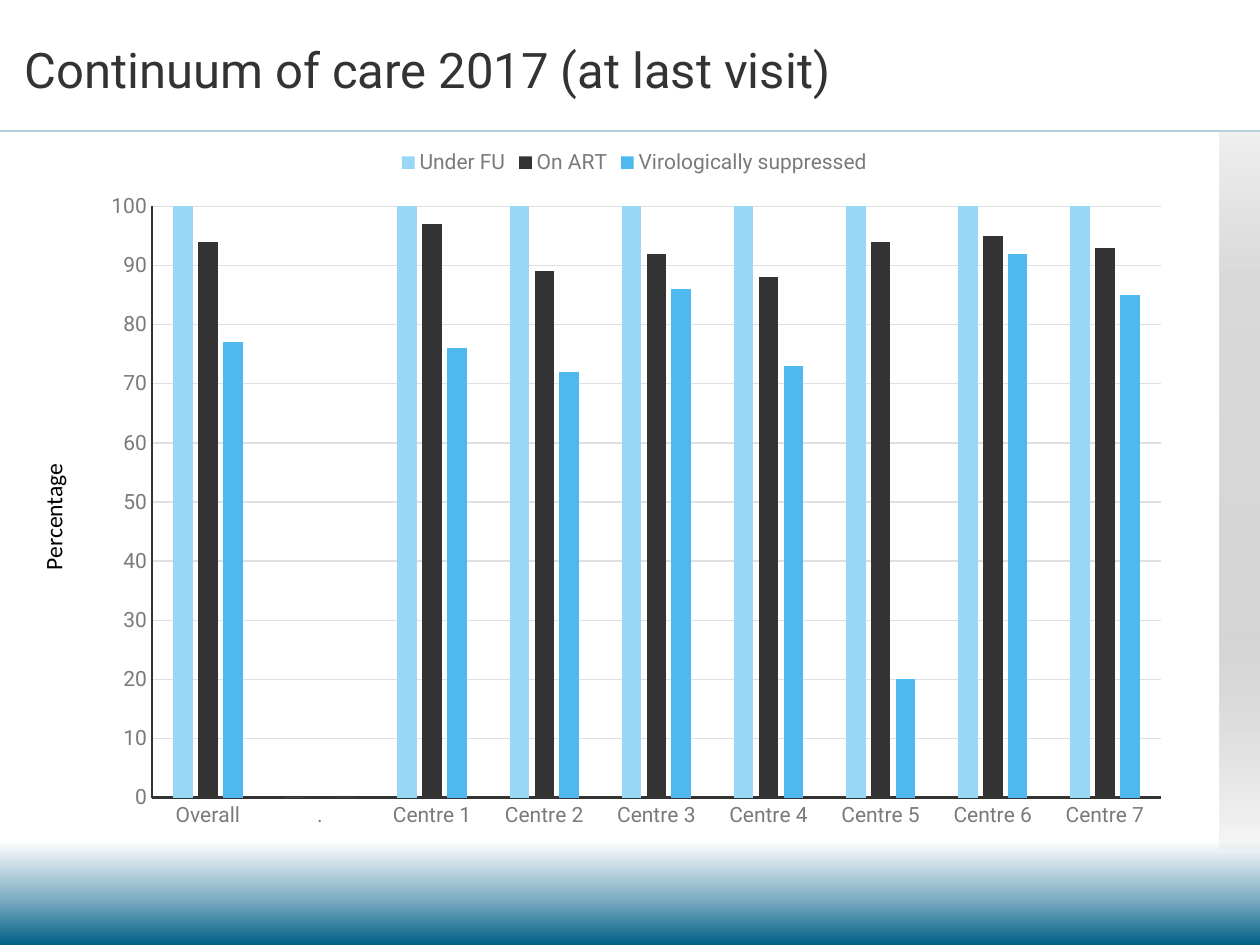
from dataclasses import dataclass

from lxml import etree
from pptx import Presentation
from pptx import util as u
from pptx.chart import data as chart_data
from pptx.dml.color import RGBColor
from pptx.enum import chart as charts, shapes, text
from pptx.oxml import ns

PX = 914400 / 126
SERIES = {
    "Under FU": ("99D7F6", [100, 0, 100, 100, 100, 100, 100, 100, 100]),
    "On ART": ("333333", [94, 0, 97, 89, 92, 88, 94, 95, 93]),
    "Virologically suppressed": ("4DB9EF", [77, 0, 76, 72, 86, 73, 20, 92, 85]),
}
CATEGORIES = ["Overall", "."] + [f"Centre {n}" for n in range(1, 8)]


@dataclass(frozen=True)
class Theme:
    dark: str = "333333"
    grey: str = "7A7A7A"
    grid: str = "E0E0E0"
    black: str = "000000"
    rule: str = "005F86"
    backdrop: tuple = ((89, "FFFFFF", 100), (95, "80AFC3", 100), (100, "005F86", 100))
    band: tuple = ((0, "D9D9D9", 40), (21, "D9D9D9", 100),
                   (70, "D5D5D5", 100), (100, "BFBFBF", 13))
    font: str = "Roboto"
    label_font: str = "Calibri"
    title_size: float = 28
    label_size: float = 13.5
    chart_size: float = 12


def px(*lengths):
    return [u.Emu(round(length * PX)) for length in lengths]


def rgb(value):
    return RGBColor.from_string(value)


def add_alpha(color, percent):
    etree.SubElement(color, ns.qn("a:alpha"), val=str(percent * 1000))


class SlideBuilder:
    def __init__(self, page, theme):
        self.page = page
        self.theme = theme

    def style(self, font, name, size, color):
        font.name = name
        font.size = u.Pt(size)
        font.color.rgb = rgb(color)

    def gradient(self, fill, owner, stops):
        fill.gradient()
        fill.gradient_angle = 270
        stop_list = owner.find(".//" + ns.qn("a:gsLst"))
        for old in list(stop_list):
            stop_list.remove(old)
        for position, value, opacity in stops:
            stop = etree.SubElement(stop_list, ns.qn("a:gs"), pos=str(position * 1000))
            color = etree.SubElement(stop, ns.qn("a:srgbClr"), val=value)
            if opacity < 100:
                add_alpha(color, opacity)

    def background(self, stops):
        self.gradient(self.page.background.fill, self.page.element, stops)

    def rule(self, x1, y1, x2, y2, color, opacity):
        line = self.page.shapes.add_connector(
            shapes.MSO_CONNECTOR.STRAIGHT, *px(x1, y1, x2, y2))
        line.line.width = u.Pt(1)
        line.line.color.rgb = rgb(color)
        properties = line.element.spPr
        add_alpha(properties.find(".//" + ns.qn("a:srgbClr")), opacity)
        etree.SubElement(properties, ns.qn("a:effectLst"))

    def band(self, x, y, width, height, stops):
        band = self.page.shapes.add_shape(
            shapes.MSO_SHAPE.RECTANGLE, *px(x, y, width, height))
        band.shadow.inherit = False
        band.line.fill.background()
        self.gradient(band.fill, band.element.spPr, stops)

    def text(self, x, y, width, height, words, font, size, color,
             anchor=text.MSO_ANCHOR.TOP, spacing=None, rotation=0):
        box = self.page.shapes.add_textbox(*px(x, y, width, height))
        box.rotation = rotation
        frame = box.text_frame
        frame.word_wrap = True
        frame.vertical_anchor = anchor
        para = frame.paragraphs[0]
        para.line_spacing = spacing
        span = para.add_run()
        span.text = words
        self.style(span.font, font, size, color)

    def axis(self, axis):
        theme = self.theme
        axis.major_tick_mark = axis.minor_tick_mark = charts.XL_TICK_MARK.NONE
        axis.format.line.width = u.Pt(1.5)
        axis.format.line.color.rgb = rgb(theme.dark)
        self.style(axis.tick_labels.font, theme.font, theme.chart_size, theme.grey)

    def plot_layout(self, chart, **fractions):
        area = chart.element.find(".//" + ns.qn("c:plotArea"))
        layout = area.find(ns.qn("c:layout"))
        if layout is None:
            layout = etree.Element(ns.qn("c:layout"))
            area.insert(0, layout)
        manual = etree.SubElement(layout, ns.qn("c:manualLayout"))
        settings = {"layoutTarget": "inner", "xMode": "edge", "yMode": "edge", **fractions}
        for name, value in settings.items():
            etree.SubElement(manual, ns.qn("c:" + name), val=str(value))

    def column_chart(self, x, y, width, height, categories, series):
        theme = self.theme
        values = chart_data.CategoryChartData(number_format="0")
        values.categories = categories
        for name, (_, numbers) in series.items():
            values.add_series(name, numbers)
        chart = self.page.shapes.add_chart(
            charts.XL_CHART_TYPE.COLUMN_CLUSTERED, *px(x, y, width, height), values).chart
        chart.has_title = False
        self.style(chart.font, theme.font, theme.chart_size, theme.grey)
        chart.has_legend = True
        chart.legend.position = charts.XL_LEGEND_POSITION.TOP
        chart.legend.include_in_layout = False
        self.style(chart.legend.font, theme.font, theme.chart_size, theme.grey)

        plot = chart.plots[0]
        plot.vary_by_categories = False
        plot.gap_width = 219
        plot.overlap = -27
        for column, (color, _) in zip(plot.series, series.values()):
            column.format.fill.solid()
            column.format.fill.fore_color.rgb = rgb(color)

        self.axis(chart.category_axis)
        scale = chart.value_axis
        self.axis(scale)
        scale.minimum_scale = 0
        scale.maximum_scale = 100
        scale.major_unit = 10
        grid = scale.major_gridlines.format.line
        grid.width = u.Pt(0.75)
        grid.color.rgb = rgb(theme.grid)
        self.plot_layout(chart, x=0.06, y=0.1, w=0.92, h=0.84)


def main():
    deck = Presentation()
    deck.slide_width, deck.slide_height = px(1260, 945)
    theme = Theme()
    slide = SlideBuilder(deck.slides.add_slide(deck.slide_layouts[6]), theme)
    slide.background(theme.backdrop)
    slide.rule(0, 131, 1260, 131, theme.rule, 30)
    slide.band(1220, 132, 40, 717, theme.band)
    slide.text(12, 0, 1028, 145, "Continuum of care 2017 (at last visit)",
               theme.font, theme.title_size, theme.dark,
               anchor=text.MSO_ANCHOR.MIDDLE, spacing=0.9)
    slide.column_chart(86, 136, 1097, 704, CATEGORIES, SERIES)
    slide.text(-29, 479, 165, 42, "Percentage", theme.label_font,
               theme.label_size, theme.black, rotation=270)
    deck.save("out.pptx")


if __name__ == "__main__":
    main()
